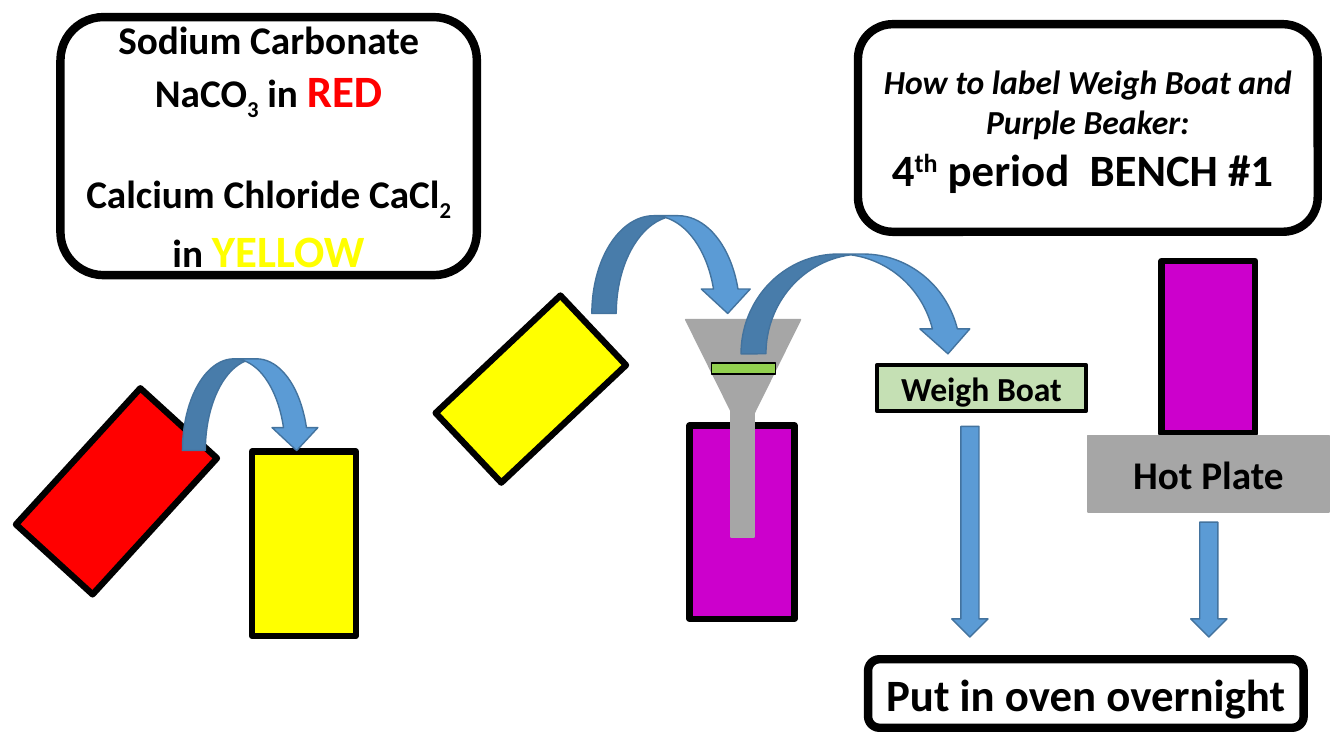
from dataclasses import dataclass

from lxml import etree
from pptx import Presentation
from pptx.dml.color import RGBColor
from pptx.enum.shapes import MSO_SHAPE
from pptx.enum.text import MSO_ANCHOR, PP_ALIGN
from pptx.oxml.ns import qn
from pptx.util import Emu, Pt

PX = 9144  # 100 px to the inch
FONT = "Calibri"

RECT = MSO_SHAPE.RECTANGLE
ROUND = MSO_SHAPE.ROUNDED_RECTANGLE
TRIANGLE = MSO_SHAPE.ISOSCELES_TRIANGLE
CURVED = MSO_SHAPE.CURVED_DOWN_ARROW
DOWN = MSO_SHAPE.DOWN_ARROW
MIDDLE = MSO_ANCHOR.MIDDLE
CENTER = PP_ALIGN.CENTER

BLACK = RGBColor(0x00, 0x00, 0x00)
WHITE = RGBColor(0xFF, 0xFF, 0xFF)
RED = RGBColor(0xFF, 0x00, 0x00)
YELLOW = RGBColor(0xFF, 0xFF, 0x00)
PURPLE = RGBColor(0xCC, 0x00, 0xCC)
GRAY = RGBColor(0xA6, 0xA6, 0xA6)
BLUE = RGBColor(0x5B, 0x9B, 0xD5)
DARK_BLUE = RGBColor(0x43, 0x73, 0x9E)
PALE_GREEN = RGBColor(0xC5, 0xE0, 0xB4)
GREEN = RGBColor(0x92, 0xD0, 0x50)


@dataclass(frozen=True)
class Style:
    fill: RGBColor
    line: RGBColor = BLACK
    width: float = 4.5


@dataclass(frozen=True)
class Span:
    text: str
    size: int = 28
    color: RGBColor = BLACK
    italic: bool = False
    baseline: int = 0
    outlined: bool = False


@dataclass(frozen=True)
class Item:
    kind: MSO_SHAPE
    box: tuple[int, int, int, int]
    style: Style
    rotation: float = 0
    paragraphs: tuple[tuple[Span, ...], ...] = ()
    gap: int = 0


FRAME = Style(WHITE, width=6)
RED_BEAKER = Style(RED)
YELLOW_BEAKER = Style(YELLOW)
PURPLE_BEAKER = Style(PURPLE)
ARROW = Style(BLUE, DARK_BLUE, 1)
METAL = Style(GRAY, GRAY, 1)
BOAT = Style(PALE_GREEN, width=3)
FILTER = Style(GREEN, width=1)

LABEL_TEXT = ((
    Span("How to label Weigh Boat and Purple Beaker:\n", 24, italic=True),
    Span("4", 32),
    Span("th", 32, baseline=30),
    Span(" period  BENCH #1 ", 32),
),)
CHEMICAL_TEXT = (
    (Span("Sodium Carbonate NaCO"), Span("3", baseline=-25), Span(" in "),
     Span("RED", 32, RED, outlined=True)),
    (Span("Calcium Chloride CaCl"), Span("2", baseline=-25), Span(" in "),
     Span("YELLOW", 32, YELLOW, outlined=True)),
)

ITEMS = (
    Item(ROUND, (851, 24, 456, 206), FRAME, paragraphs=LABEL_TEXT),
    Item(ROUND, (60, 17, 413, 256), FRAME, paragraphs=CHEMICAL_TEXT, gap=34),
    Item(RECT, (64, 396, 103, 183), RED_BEAKER, 42.4),
    Item(RECT, (250, 448, 103, 183), YELLOW_BEAKER),
    Item(RECT, (684, 422, 104, 192), PURPLE_BEAKER),
    Item(CURVED, (181, 356, 136, 91), ARROW),
    Item(RECT, (479, 301, 95, 170), YELLOW_BEAKER, 46.7),
    Item(CURVED, (587, 214, 159, 97), ARROW),
    Item(TRIANGLE, (680, 317, 114, 115), METAL, 180),
    Item(RECT, (725, 363, 23, 170), METAL),
    Item(RECT, (1152, 259, 93, 171), PURPLE_BEAKER),
    Item(RECT, (1079, 432, 239, 76), METAL, paragraphs=((Span("Hot Plate"),),)),
    Item(CURVED, (735, 252, 230, 99), ARROW),
    Item(RECT, (870, 362, 207, 46), BOAT, paragraphs=((Span("Weigh Boat", 24),),)),
    Item(ROUND, (861, 654, 432, 68), FRAME,
         paragraphs=((Span("Put in oven overnight", 32),),)),
    Item(RECT, (706, 360, 63, 11), FILTER),
    Item(DOWN, (944, 423, 36, 209), ARROW),
    Item(DOWN, (1181, 518, 36, 114), ARROW),
)


def add_span(p, span: Span) -> None:
    """Add one run; a closing newline becomes a line break."""
    r = p.add_run()
    r.text = span.text.rstrip("\n")
    formats = {"name": FONT, "size": Pt(span.size), "bold": True, "italic": span.italic}
    for name, value in formats.items():
        setattr(r.font, name, value)
    r.font.color.rgb = span.color
    props = r._r.get_or_add_rPr()
    if span.baseline:
        props.set("baseline", str(span.baseline * 1000))
    if span.outlined:
        ln = etree.Element(qn("a:ln"), w=str(Pt(0.75)))
        fill = etree.SubElement(ln, qn("a:solidFill"))
        etree.SubElement(fill, qn("a:srgbClr"), val=str(BLACK))
        props.insert(0, ln)
    if span.text.endswith("\n"):
        p.add_line_break()


def add_text(tf, item: Item) -> None:
    tf.word_wrap = True
    tf.vertical_anchor = MIDDLE
    for i, spans in enumerate(item.paragraphs):
        p = tf.add_paragraph() if i else tf.paragraphs[0]
        p.alignment = CENTER
        if i:
            p.space_before = Pt(item.gap)
        for span in spans:
            add_span(p, span)


def add_item(s, item: Item) -> None:
    sp = s.shapes.add_shape(item.kind, *(Emu(v * PX) for v in item.box))
    sp.rotation = item.rotation
    sp.shadow.inherit = False
    sp.fill.solid()
    sp.fill.fore_color.rgb = item.style.fill
    sp.line.color.rgb = item.style.line
    sp.line.width = Pt(item.style.width)
    if item.paragraphs:
        add_text(sp.text_frame, item)


def main() -> None:
    prs = Presentation()
    prs.slide_width, prs.slide_height = Emu(1333 * PX), Emu(750 * PX)
    s = prs.slides.add_slide(prs.slide_layouts[6])
    for item in ITEMS:
        add_item(s, item)
    prs.save("out.pptx")


if __name__ == "__main__":
    main()
